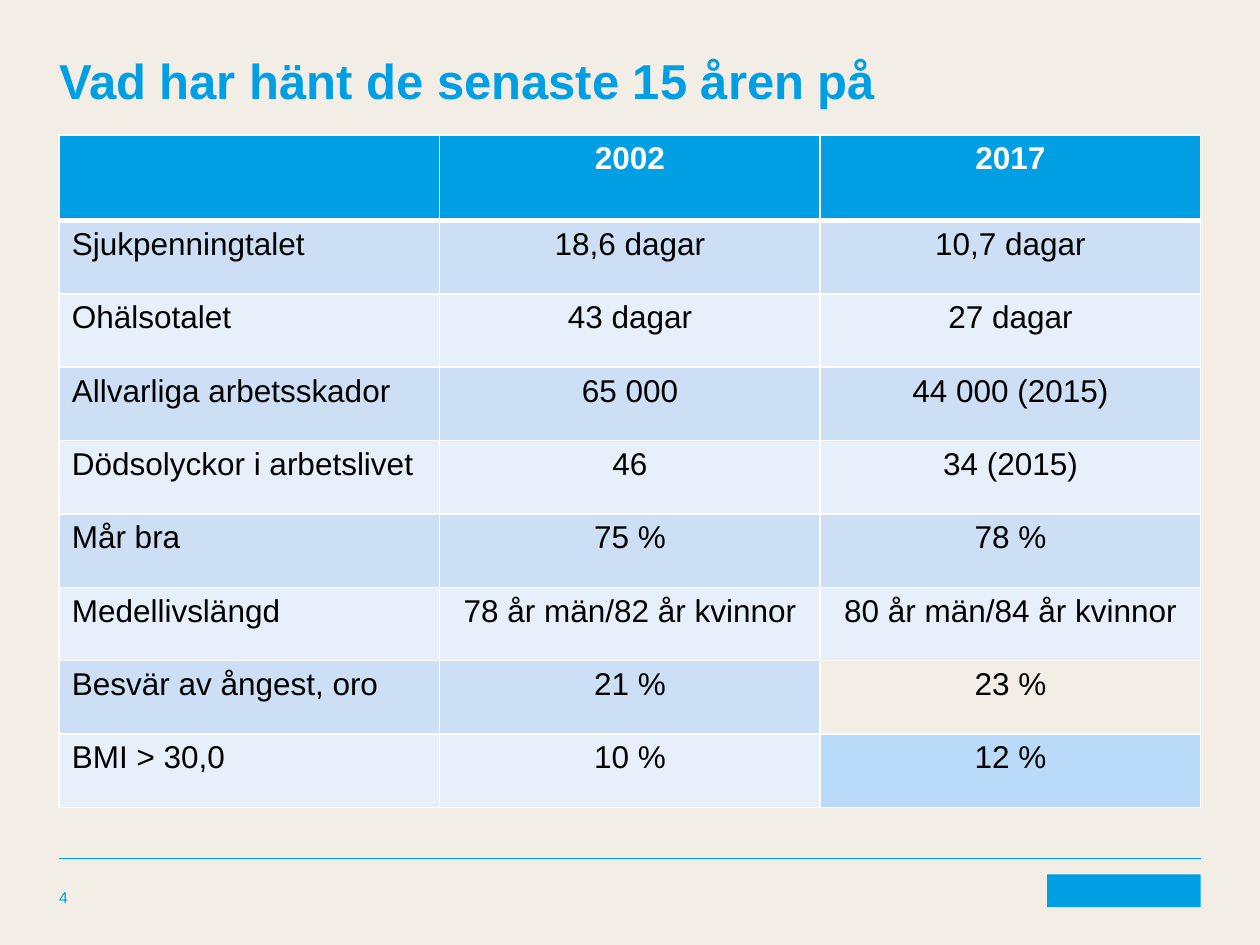
from lxml import etree
from pptx import Presentation
from pptx import util as u
from pptx.dml.color import RGBColor
from pptx.enum import shapes, text
from pptx.oxml.ns import qn

SAND = RGBColor(0xF2, 0xEE, 0xE6)
BLUE = RGBColor(0x00, 0x9F, 0xE4)
MID = RGBColor(0xCC, 0xDF, 0xF5)
PALE = RGBColor(0xE7, 0xF0, 0xFA)
SKY = RGBColor(0xBA, 0xDA, 0xFA)
WHITE = RGBColor(0xFF, 0xFF, 0xFF)
BLACK = RGBColor(0x00, 0x00, 0x00)

LEFT, WIDTH = 0.47, 9.06
HEAD, TALL = 0.68, 5.34

ROWS = [
    ("", "2002", "2017"),
    ("Sjukpenningtalet", "18,6 dagar", "10,7 dagar"),
    ("Ohälsotalet", "43 dagar", "27 dagar"),
    ("Allvarliga arbetsskador", "65 000", "44 000 (2015)"),
    ("Dödsolyckor i arbetslivet", "46", "34 (2015)"),
    ("Mår bra", "75 %", "78 %"),
    ("Medellivslängd", "78 år män/82 år kvinnor", "80 år män/84 år kvinnor"),
    ("Besvär av ångest, oro", "21 %", "23 %"),
    ("BMI > 30,0", "10 %", "12 %"),
]
# Cells that break the banding; None means no fill
ODD = {(7, 2): None, (8, 2): SKY}


def box(left, top, width, height):
    return [u.Inches(n) for n in (left, top, width, height)]


def style(para, size, color, bold=False):
    para.font.color.rgb = color
    looks = {"name": "Arial", "size": u.Pt(size), "bold": bold}
    for key, val in looks.items():
        setattr(para.font, key, val)


def label(slide, words, area, size, bold=False, anchor=text.MSO_ANCHOR.TOP, drop=0):
    frame = slide.shapes.add_textbox(*box(*area)).text_frame
    looks = {
        "word_wrap": True,
        "vertical_anchor": anchor,
        "margin_left": 0,
        "margin_right": 0,
        "margin_top": u.Inches(drop),
        "margin_bottom": 0,
    }
    for key, val in looks.items():
        setattr(frame, key, val)
    para = frame.paragraphs[0]
    para.text = words
    style(para, size, BLUE, bold)


def edge(cell, base):
    """Give the cell white borders, with its own weight at the base."""
    props = cell._tc.get_or_add_tcPr()
    sides = {"lnL": 1, "lnR": 1, "lnT": 1, "lnB": base}
    for spot, (side, weight) in enumerate(sides.items()):
        line = etree.Element(qn("a:" + side), w=str(u.Pt(weight)))
        fill = etree.SubElement(line, qn("a:solidFill"))
        etree.SubElement(fill, qn("a:srgbClr"), val=str(WHITE))
        props.insert(spot, line)


def paint(cell, row, col):
    band = BLUE if row == 0 else MID if row % 2 else PALE
    color = ODD.get((row, col), band)
    if color is None:
        cell.fill.background()
    else:
        cell.fill.solid()
        cell.fill.fore_color.rgb = color


def grid(slide):
    area = box(LEFT, 1.07, WIDTH, TALL)
    table = slide.shapes.add_table(len(ROWS), len(ROWS[0]), *area).table
    table.horz_banding = False
    for col in table.columns:
        col.width = u.Inches(WIDTH / len(ROWS[0]))
    for row, words in enumerate(ROWS):
        high = (TALL - HEAD) / (len(ROWS) - 1) if row else HEAD
        table.rows[row].height = u.Inches(high)
        for col, word in enumerate(words):
            cell = table.cell(row, col)
            para = cell.text_frame.paragraphs[0]
            para.text = word
            if col:
                para.alignment = text.PP_ALIGN.CENTER
            style(para, 18, BLACK if row else WHITE, row == 0)
            paint(cell, row, col)
            edge(cell, 1 if row else 3)


def rule(slide, top):
    ends = [u.Inches(n) for n in (LEFT, top, LEFT + WIDTH, top)]
    line = slide.shapes.add_connector(shapes.MSO_CONNECTOR.STRAIGHT, *ends)
    line.line.color.rgb = BLUE
    line.line.width = u.Pt(0.5)
    etree.SubElement(line._element.spPr, qn("a:effectLst"))


def block(slide, area):
    shape = slide.shapes.add_shape(shapes.MSO_SHAPE.RECTANGLE, *box(*area))
    shape.shadow.inherit = False
    shape.fill.solid()
    shape.fill.fore_color.rgb = BLUE
    shape.line.fill.background()


def main():
    deck = Presentation()
    deck.slide_width, deck.slide_height = u.Inches(10), u.Inches(7.5)
    slide = deck.slides.add_slide(deck.slide_layouts[6])
    slide.background.fill.solid()
    slide.background.fill.fore_color.rgb = SAND

    # Footer rule and brand block
    rule(slide, 6.81)
    block(slide, (8.31, 6.94, 1.22, 0.26))

    # Title and table
    label(slide, "Vad har hänt de senaste 15 åren på",
          (LEFT, 0.36, WIDTH, 1.65), 28, bold=True, drop=0.04)
    grid(slide)

    # Page number
    label(slide, "4", (LEFT, 6.94, 2.36, 0.26), 9, anchor=text.MSO_ANCHOR.BOTTOM)

    deck.save("out.pptx")


if __name__ == "__main__":
    main()
